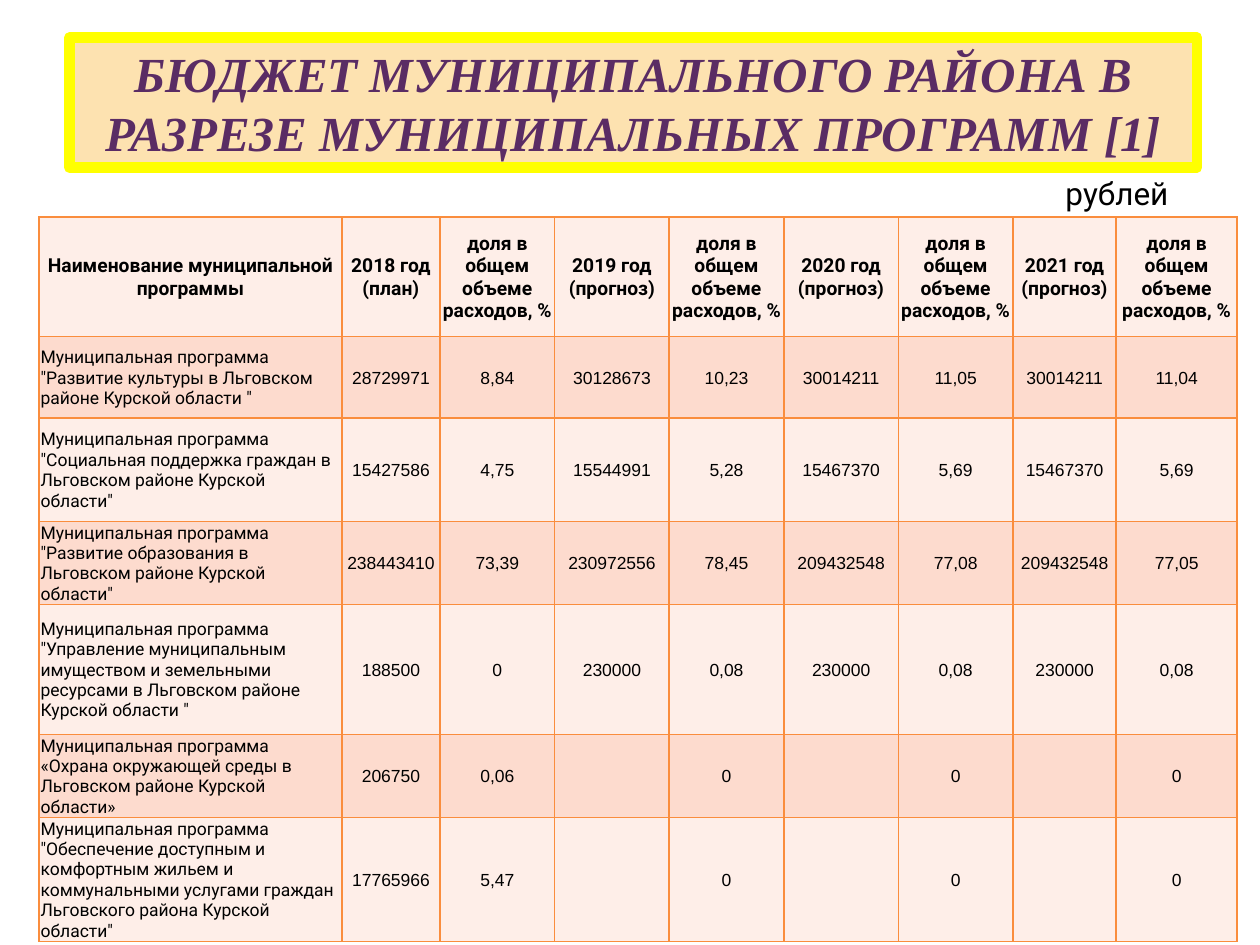
from lxml.etree import SubElement
from pptx import Presentation
from pptx.dml.color import RGBColor
from pptx.enum.text import MSO_ANCHOR as Anchor, MSO_AUTO_SIZE as AutoSize, PP_ALIGN as Align
from pptx.oxml.ns import qn
from pptx.util import Cm, Pt

COLORS = {
    "title_fill": "FDE2B0", "title_line": "FFFF00", "title_text": "5A2C64",
    "text": "000000", "border": "FA8D3D", "light": "FEEEE8", "dark": "FDDBCE",
}
COLUMN_WIDTHS = [6.1, 1.98, 2.31, 2.31, 2.31, 2.31, 2.31, 2.08, 2.44]
ROW_HEIGHTS = [2.41, 1.65, 2.08, 1.35, 2.62, 1.6, 2.24]
YEARS = ["2018 год (план)", "2019 год (прогноз)", "2020 год (прогноз)", "2021 год (прогноз)"]
SHARE = "доля в общем объеме расходов, %"
PROGRAMS = [
    ('"Развитие культуры в Льговском районе Курской области "',
     ["28729971", "8,84", "30128673", "10,23", "30014211", "11,05", "30014211", "11,04"]),
    ('"Социальная поддержка граждан в Льговском районе Курской области"',
     ["15427586", "4,75", "15544991", "5,28", "15467370", "5,69", "15467370", "5,69"]),
    ('"Развитие образования в Льговском районе Курской области"',
     ["238443410", "73,39", "230972556", "78,45", "209432548", "77,08", "209432548", "77,05"]),
    ('"Управление муниципальным имуществом и земельными ресурсами '
     'в Льговском районе Курской области "',
     ["188500", "0", "230000", "0,08", "230000", "0,08", "230000", "0,08"]),
    ("«Охрана окружающей среды в Льговском районе Курской области»",
     ["206750", "0,06", "", "0", "", "0", "", "0"]),
    ('"Обеспечение доступным и комфортным жильем и коммунальными услугами '
     'граждан Льговского района Курской области"',
     ["17765966", "5,47", "", "0", "", "0", "", "0"]),
]


def color(name):
    return RGBColor.from_string(COLORS[name])


def set_values(target, values):
    for name, value in values.items():
        setattr(target, name, value)


def write(frame, text, ink="text", align=Align.LEFT, **font):
    para = frame.paragraphs[0]
    para.alignment = align
    if text:
        span = para.add_run()
        span.text = text
        set_values(span.font, font)
        span.font.color.rgb = color(ink)
    else:
        set_values(para.font, font)


def add_title(page, left, top, width, height):
    title = page.shapes.title
    set_values(title, {"left": left, "top": top, "width": width, "height": height})
    title.fill.solid()
    title.fill.fore_color.rgb = color("title_fill")
    title.line.color.rgb = color("title_line")
    title.line.width = Pt(6)
    SubElement(title.line._get_or_add_ln(), qn("a:round"))
    set_values(title.text_frame, {
        "word_wrap": True, "auto_size": AutoSize.NONE, "vertical_anchor": Anchor.MIDDLE,
        "margin_left": Cm(0.13), "margin_right": Cm(0.13), "margin_top": 0, "margin_bottom": 0,
    })
    write(title.text_frame, "БЮДЖЕТ МУНИЦИПАЛЬНОГО РАЙОНА В РАЗРЕЗЕ МУНИЦИПАЛЬНЫХ ПРОГРАММ [1]",
          "title_text", Align.CENTER, name="Times New Roman", size=Pt(28), bold=True, italic=True)


def add_unit(page, left, top, width, height):
    frame = page.shapes.add_textbox(left, top, width, height).text_frame
    set_values(frame, {"word_wrap": False, "auto_size": AutoSize.SHAPE_TO_FIT_TEXT})
    write(frame, "рублей", name="Roboto", size=Pt(18))


def add_borders(cell):
    properties = cell._tc.get_or_add_tcPr()
    for side in ("lnL", "lnR", "lnT", "lnB"):
        line = SubElement(properties, qn(f"a:{side}"), w=str(Pt(1)))
        fill = SubElement(line, qn("a:solidFill"))
        SubElement(fill, qn("a:srgbClr"), val=COLORS["border"])


def add_programs(page, left, top, width, height):
    rows = [["Наименование муниципальной программы"] + [head for year in YEARS for head in (year, SHARE)]]
    rows += [[f"Муниципальная программа {name}", *values] for name, values in PROGRAMS]
    table = page.shapes.add_table(len(rows), len(COLUMN_WIDTHS), left, top, width, height).table
    for column, size in zip(table.columns, COLUMN_WIDTHS):
        column.width = Cm(size)
    for r, (texts, size) in enumerate(zip(rows, ROW_HEIGHTS)):
        table.rows[r].height = Cm(size)
        for c, text in enumerate(texts):
            cell = table.cell(r, c)
            set_values(cell, {
                "vertical_anchor": Anchor.MIDDLE, "margin_left": Cm(0.03),
                "margin_right": Cm(0.03), "margin_top": Cm(0.03), "margin_bottom": 0,
            })
            add_borders(cell)
            cell.fill.solid()
            cell.fill.fore_color.rgb = color("dark" if r % 2 else "light")
            header, label = r == 0, c == 0
            write(cell.text_frame, text,
                  align=Align.LEFT if label and not header else Align.CENTER,
                  name="Roboto" if header or label else "Arial",
                  size=Pt(11 if header else 10), bold=header)


def main():
    deck = Presentation()
    deck.slide_width, deck.slide_height = Cm(25.4), Cm(19.05)
    page = deck.slides.add_slide(deck.slide_layouts[5])
    add_title(page, Cm(1.4), Cm(0.76), Cm(22.73), Cm(2.62))
    add_programs(page, Cm(0.79), Cm(4.37), Cm(sum(COLUMN_WIDTHS)), Cm(sum(ROW_HEIGHTS)))
    add_unit(page, Cm(21.23), Cm(3.38), Cm(2.62), Cm(1.02))
    deck.save("out.pptx")


if __name__ == "__main__":
    main()
